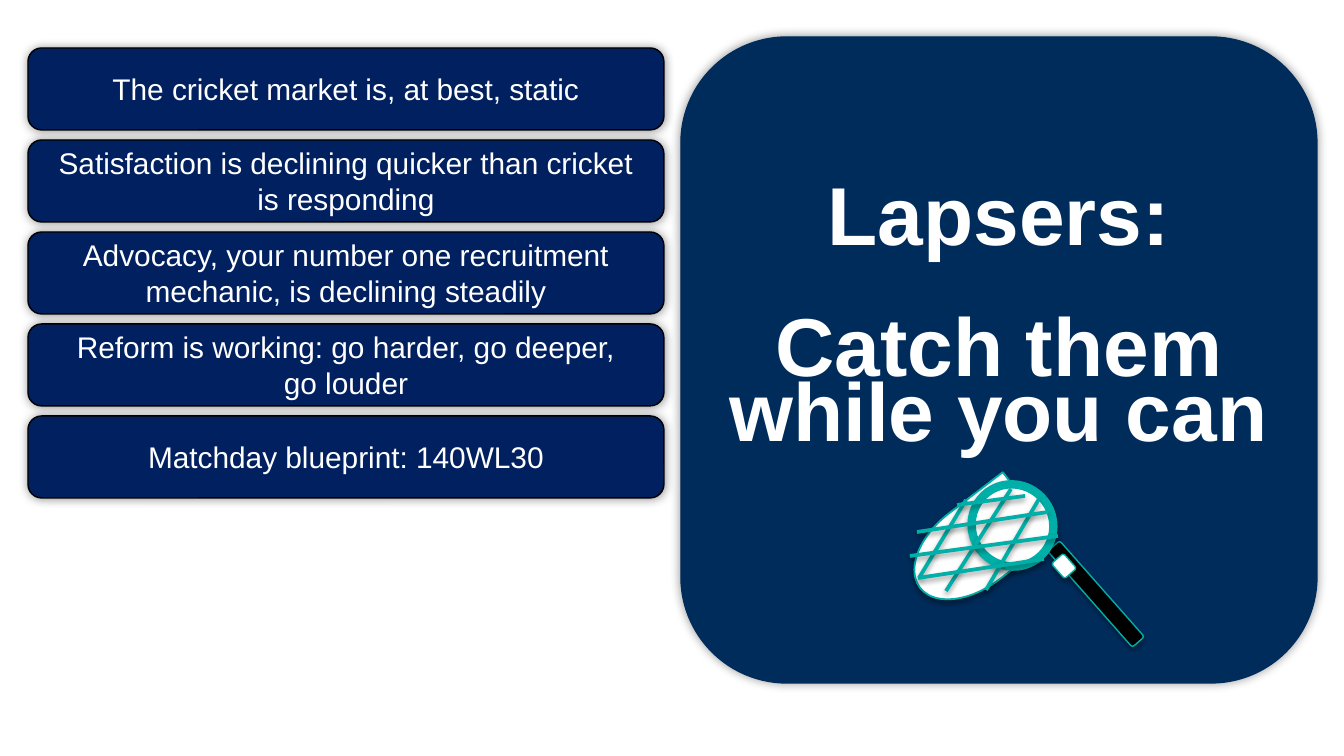
import lxml.etree
import pptx
import pptx.dml.color
import pptx.enum.shapes
import pptx.enum.text
import pptx.oxml.ns
import pptx.util

PX = 914400 / 134.4
COLORS = {
    "box": "002060",
    "panel": "002C5B",
    "teal": "00AFA8",
    "white": "FFFFFF",
    "black": "000000",
}
SHAPES = pptx.enum.shapes.MSO_SHAPE


def style(shape, fill=None, line="black", width=0.75, shadow=(40, 5, 0, 0)):
    """Set fill, outline and a shadow of (opacity %, blur pt, distance pt, degrees)."""
    if fill:
        shape.fill.solid()
        shape.fill.fore_color.rgb = pptx.dml.color.RGBColor.from_string(COLORS[fill])
    shape.line.color.rgb = pptx.dml.color.RGBColor.from_string(COLORS[line])
    shape.line.width = pptx.util.Pt(width)
    opacity, blur, distance, angle = shadow
    qn = pptx.oxml.ns.qn
    effects = lxml.etree.SubElement(shape._element.spPr, qn("a:effectLst"))
    outer = lxml.etree.SubElement(
        effects, qn("a:outerShdw"), blurRad=str(pptx.util.Pt(blur)),
        dist=str(pptx.util.Pt(distance)), dir=str(angle * 60000),
        algn="ctr", rotWithShape="0")
    color = lxml.etree.SubElement(outer, qn("a:srgbClr"), val=COLORS["black"])
    lxml.etree.SubElement(color, qn("a:alpha"), val=str(opacity * 1000))


def write_text(shape, text, size=16, bold=False, line_spacing=None, gap=0):
    """Write centred paragraphs, one per line of text, with gap points between them."""
    frame = shape.text_frame
    frame.word_wrap = True
    frame.vertical_anchor = pptx.enum.text.MSO_ANCHOR.MIDDLE
    for index, words in enumerate(text.split("\n")):
        paragraph = frame.add_paragraph() if index else frame.paragraphs[0]
        paragraph.alignment = pptx.enum.text.PP_ALIGN.CENTER
        if line_spacing:
            paragraph.line_spacing = pptx.util.Pt(line_spacing)
        if index:
            paragraph.space_before = pptx.util.Pt(gap)
        run = paragraph.add_run()
        run.text = words
        run.font.name = "Arial"
        run.font.size = pptx.util.Pt(size)
        run.font.bold = bold
        run.font.color.rgb = pptx.dml.color.RGBColor.from_string(COLORS["white"])


presentation = pptx.Presentation()
presentation.slide_width = round(1344 * PX)
presentation.slide_height = round(756 * PX)
slide = presentation.slides.add_slide(presentation.slide_layouts[6])

# Findings on the left
findings = [
    "The cricket market is, at best, static",
    "Satisfaction is declining quicker than cricket is responding",
    "Advocacy, your number one recruitment mechanic, is declining steadily",
    "Reform is working: go harder, go deeper,\ngo louder",
    "Matchday blueprint: 140WL30",
]
for row, finding in enumerate(findings):
    place = (28, 48 + 92 * row, 636, 82)
    box = slide.shapes.add_shape(SHAPES.ROUNDED_RECTANGLE, *(round(v * PX) for v in place))
    style(box, "box")
    write_text(box, finding)

# Message panel on the right
place = (681, 37, 636, 646)
panel = slide.shapes.add_shape(SHAPES.ROUNDED_RECTANGLE, *(round(v * PX) for v in place))
style(panel, "panel", "panel")
write_text(panel, "Lapsers:\nCatch them while you can", size=44, bold=True,
           line_spacing=35, gap=35)
panel.text_frame.margin_bottom = round(72 * PX)  # lifts the text above the net

# Catching net: bag, handle and hoop, then the mesh, then the ferrule
net = slide.shapes.add_group_shape()
parts = [
    (SHAPES.FLOWCHART_DELAY, (906, 505, 136, 83), 142.6, "white", 1),
    (SHAPES.ROUNDED_RECTANGLE, (1032, 586, 128, 16), 228.6, "black", 0.75),
    (SHAPES.OVAL, (972, 484, 81, 83), 323.5, "white", 4.5),
    (SHAPES.ROUNDED_RECTANGLE, (1054, 558, 20, 16), 228.6, "white", 0.75),
]
mesh = [
    (1011, 489, 946, 591),
    (1039, 499, 986, 590),
    (966, 500, 919, 578),
    (1058, 536, 910, 556),
    (1048, 512, 917, 532),
    (1044, 559, 918, 578),
    (1025, 496, 957, 505),
]
for kind, place, rotation, fill, width in parts:
    if (kind, fill) == (SHAPES.ROUNDED_RECTANGLE, "white"):
        for ends in mesh:
            strand = net.shapes.add_connector(
                pptx.enum.shapes.MSO_CONNECTOR.STRAIGHT, *(round(v * PX) for v in ends))
            style(strand, line="teal", width=2, shadow=(38, 3.1, 1.6, 90))
    part = net.shapes.add_shape(kind, *(round(v * PX) for v in place))
    part.rotation = rotation
    style(part, fill, "teal", width, shadow=(35, 3.1, 1.8, 90))

presentation.save("out.pptx")
